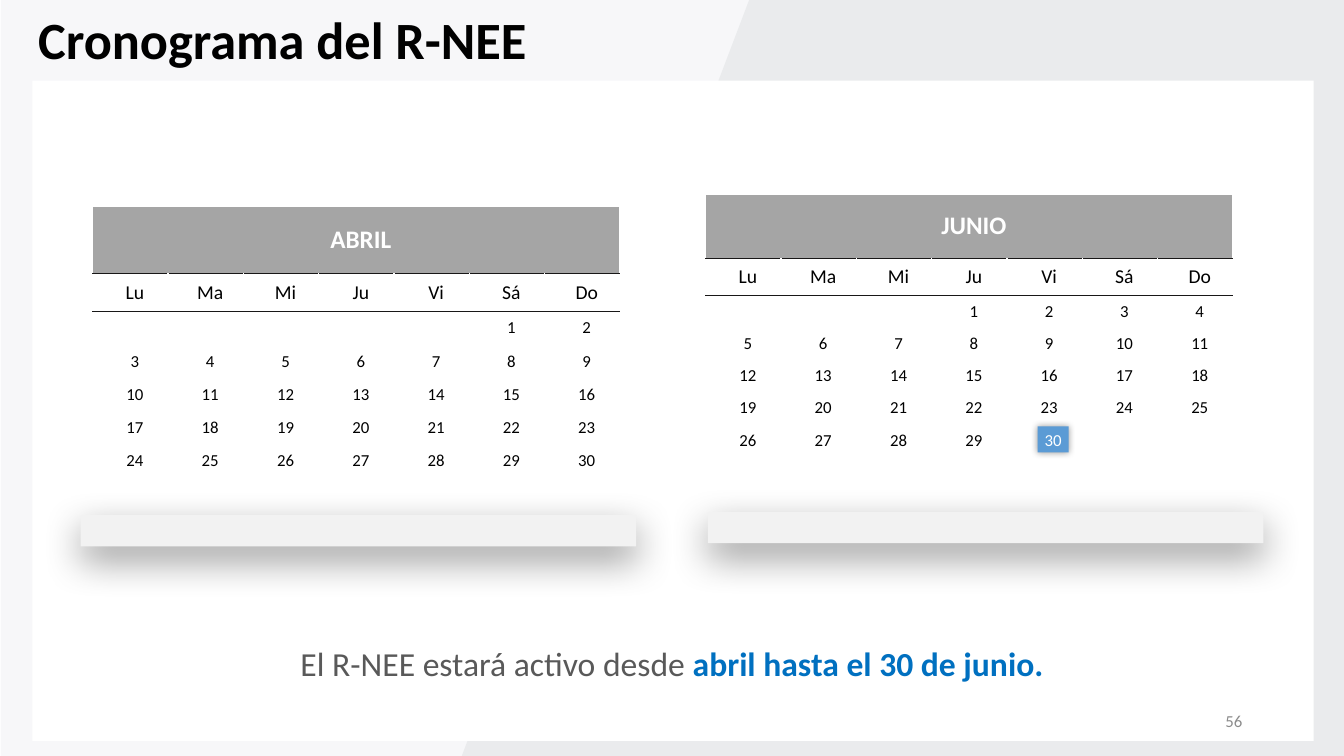
from lxml import etree
from pptx import Presentation
from pptx import util as u
from pptx.dml.color import RGBColor
from pptx.enum import shapes, text
from pptx.oxml import ns

FONT = "Calibri"
COLORS = {
    "pale": "F7F7F9", "band": "EAEBED", "panel": "FFFFFF", "black": "000000",
    "white": "FFFFFF", "header": "A5A5A5", "rule": "181717", "body": "595959",
    "accent": "0070C0", "number": "8C8C8C", "strip": "F2F2F2", "marker": "5B9BD5",
}
DAYS = ["Lu", "Ma", "Mi", "Ju", "Vi", "Sá", "Do"]
WEEK_ROWS = 6
CALENDAR_WIDTH = 5.23


def rgb(name):
    return RGBColor.from_string(COLORS[name])


def style_font(font, size, color, bold=False):
    font.name, font.size, font.bold = FONT, u.Pt(size), bold
    font.color.rgb = rgb(color)


def add_block(page, box, color, kind=shapes.MSO_SHAPE.RECTANGLE):
    block = page.shapes.add_shape(kind, *map(u.Inches, box))
    block.shadow.inherit = False
    block.fill.solid()
    block.fill.fore_color.rgb = rgb(color)
    block.line.fill.background()
    return block


def add_shadow(block, blur, distance, angle):
    effects = block._element.spPr.find(ns.qn("a:effectLst"))
    shadow = etree.SubElement(
        effects, ns.qn("a:outerShdw"), blurRad=str(u.Pt(blur)), dist=str(u.Pt(distance)),
        dir=str(angle * 60000), algn="ctr", rotWithShape="0")
    tint = etree.SubElement(shadow, ns.qn("a:srgbClr"), val=COLORS["black"])
    etree.SubElement(tint, ns.qn("a:alpha"), val="40000")


def add_label(page, box, align):
    frame = page.shapes.add_textbox(*map(u.Inches, box)).text_frame
    frame.word_wrap = True
    frame.vertical_anchor = text.MSO_ANCHOR.MIDDLE
    para = frame.paragraphs[0]
    para.alignment = align
    return para


def set_borders(cell, top, bottom):
    props = cell._tc.get_or_add_tcPr()
    sides = {"L": "white", "R": "white", "T": top, "B": bottom}
    for side, color in sides.items():
        width = 0.25 if color == "rule" else 1
        line = etree.SubElement(props, ns.qn(f"a:ln{side}"), w=str(u.Pt(width)))
        fill = etree.SubElement(line, ns.qn("a:solidFill"))
        etree.SubElement(fill, ns.qn("a:srgbClr"), val=COLORS[color])


def add_background(page, width, height):
    add_block(page, (0.01, 0, width - 0.01, height), "pale")
    add_block(page, (7.98, 0, width - 7.98, height), "band")
    slope = add_block(page, (4.58, 0, width - 4.58, height), "band",
                      shapes.MSO_SHAPE.TRAPEZOID)
    slope.adjustments[0] = 0.38
    add_block(page, (0.32, 0.8, 12.71, 6.55), "panel")


def add_calendar(page, left, top, month, first_day, heights):
    """Month table; first_day is the column of day 1, and both months have 30 days."""
    header, names, week = heights
    row_heights = [header, names] + [week] * WEEK_ROWS
    box = (left, top, CALENDAR_WIDTH, sum(row_heights))
    table = page.shapes.add_table(len(row_heights), len(DAYS), *map(u.Inches, box)).table
    table.first_row = table.horz_banding = False
    for column in table.columns:
        column.width = u.Inches(CALENDAR_WIDTH / len(DAYS))

    dates = [""] * first_day + [str(day) for day in range(1, 31)]
    dates += [""] * (WEEK_ROWS * len(DAYS) - len(dates))
    values = [month] + [""] * (len(DAYS) - 1) + DAYS + dates
    for row, height in enumerate(row_heights):
        table.rows[row].height = u.Inches(height)
        for column in range(len(DAYS)):
            cell = table.cell(row, column)
            cell.text = values[row * len(DAYS) + column]
            cell.vertical_anchor = text.MSO_ANCHOR.MIDDLE
            cell.margin_left, cell.margin_right = u.Inches(0.09), 0
            cell.margin_top = cell.margin_bottom = u.Inches(0 if row else 0.05)
            set_borders(cell, "rule" if row in (1, 2) else "white",
                        "rule" if row in (0, 1) else "white")
            para = cell.text_frame.paragraphs[0]
            para.alignment = text.PP_ALIGN.CENTER
            if row == 0:
                cell.fill.solid()
                cell.fill.fore_color.rgb = rgb("header")
                style_font(para.font, 18, "white", True)
            else:
                cell.fill.background()
                style_font(para.font, 14 if row == 1 else 12, "black")
    table.cell(0, 0).merge(table.cell(0, len(DAYS) - 1))


def add_strip(page, left, top):
    add_shadow(add_block(page, (left, top, 5.51, 0.31), "strip"), 28, 10, 90)


def add_day_marker(page, box, day):
    marker = add_block(page, box, "marker")
    add_shadow(marker, 5, 0, 0)
    frame = marker.text_frame
    frame.margin_left = frame.margin_right = 0
    frame.vertical_anchor = text.MSO_ANCHOR.MIDDLE
    para = frame.paragraphs[0]
    para.text = day
    para.alignment = text.PP_ALIGN.CENTER
    style_font(para.font, 12, "white")


def add_message(page, box):
    para = add_label(page, box, text.PP_ALIGN.CENTER)
    for words, color, bold in (("El R-NEE estará activo desde ", "body", False),
                               ("abril hasta el 30 de junio.", "accent", True)):
        span = para.add_run()
        span.text = words
        style_font(span.font, 24, color, bold)


def build_schedule(page, width, height):
    add_background(page, width, height)

    # Page number and title
    number = add_label(page, (9.42, 6.95, 3, 0.4), text.PP_ALIGN.RIGHT)
    number.text = "56"
    style_font(number.font, 12, "number")
    title = add_label(page, (0.28, 0.19, 6.03, 0.54), text.PP_ALIGN.LEFT)
    title.text = "Cronograma del R-NEE"
    title.line_spacing = 0.7
    style_font(title.font, 37.4, "black", True)

    # Calendars
    add_calendar(page, 0.92, 2.05, "ABRIL", 5, (0.66, 0.38, 0.33))
    add_calendar(page, 7, 1.93, "JUNIO", 3, (0.63, 0.37, 0.32))

    # Closing message, shaded strips and the final day
    add_message(page, (1.43, 6.26, 10.47, 0.64))
    add_strip(page, 7.02, 5.08)
    add_strip(page, 0.8, 5.11)
    add_day_marker(page, (10.29, 4.23, 0.31, 0.26), "30")


def main():
    deck = Presentation()
    width, height = 13.33, 7.5
    deck.slide_width, deck.slide_height = u.Inches(width), u.Inches(height)
    build_schedule(deck.slides.add_slide(deck.slide_layouts[6]), width, height)
    deck.save("out.pptx")


if __name__ == "__main__":
    main()
